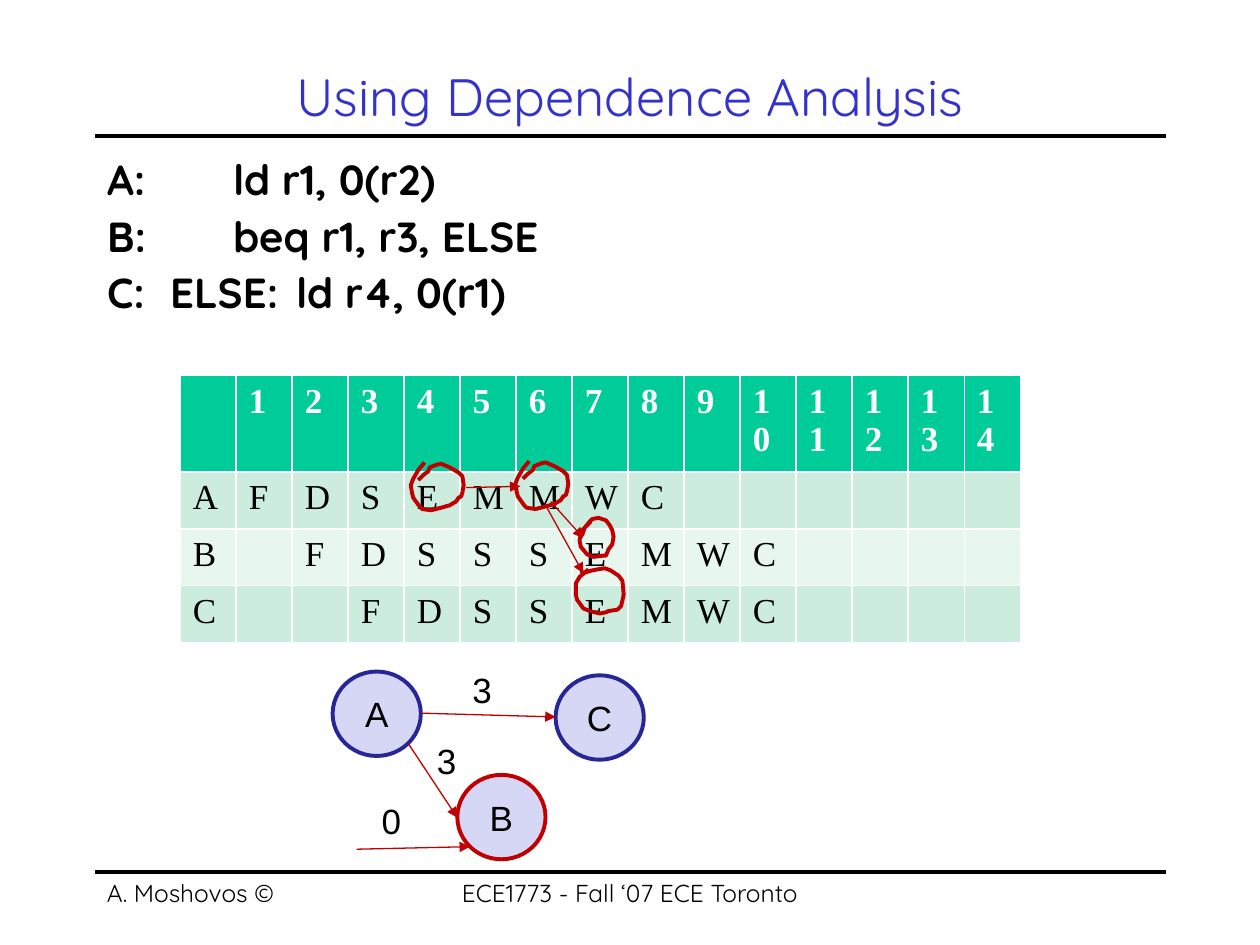
import pptx
import pptx.dml.color
import pptx.enum.shapes
import pptx.enum.text
import pptx.oxml
import pptx.oxml.ns
import pptx.util
from pptx.util import Inches

ALIGN = pptx.enum.text.PP_ALIGN
ANCHOR = pptx.enum.text.MSO_ANCHOR
RED = "C00000"


def rgb(value):
    return pptx.dml.color.RGBColor.from_string(value)


def style(tf, size, font, color="000000", bold=False, align=ALIGN.LEFT):
    for p in tf.paragraphs:
        p.alignment = align
        for r in p.runs:
            r.font.size = pptx.util.Pt(size)
            r.font.name = font
            r.font.bold = bold
            r.font.color.rgb = rgb(color)


prs = pptx.Presentation()
prs.slide_width, prs.slide_height = Inches(10), Inches(7.5)
s = prs.slides.add_slide(prs.slide_layouts[1])

title, body = s.shapes.title, s.placeholders[1]
title.left, title.top, title.width, title.height = map(Inches, (0.75, 0.42, 8.5, 0.67))
title.text_frame.text = "Using Dependence Analysis"
title.text_frame.auto_size = pptx.enum.text.MSO_AUTO_SIZE.NONE
title.text_frame.vertical_anchor = ANCHOR.MIDDLE
style(title.text_frame, 30, "Quicksand", "3333CC", align=ALIGN.CENTER)

body.left, body.top, body.width, body.height = map(Inches, (0.75, 1.17, 8.5, 3.84))
tf = body.text_frame
tf.text = "A:\t\tld r1, 0(r2)\nB:\t\tbeq r1, r3, ELSE\nC:\tELSE:\tld r4, 0(r1)"
tf.auto_size = pptx.enum.text.MSO_AUTO_SIZE.NONE
style(tf, 24, "Quicksand", bold=True)
for p in tf.paragraphs:
    p.space_before = pptx.util.Pt(3.5)
    pPr = p._p.get_or_add_pPr()
    pPr.set("marL", "0")
    pPr.set("indent", "0")
    pPr.append(pptx.oxml.parse_xml("<a:buNone %s/>" % pptx.oxml.ns.nsdecls("a")))

for text, x, w, align in [("A. Moshovos ©", 0.75, 2.08, ALIGN.LEFT),
                          ("ECE1773 - Fall ‘07 ECE Toronto", 3.25, 3.5, ALIGN.CENTER)]:
    sp = s.shapes.add_textbox(Inches(x), Inches(6.92), Inches(w), Inches(0.42))
    sp.text_frame.word_wrap = True
    sp.text_frame.text = text
    style(sp.text_frame, 14, "Quicksand", align=align)

rows = [[""] + [str(n) for n in range(1, 15)],
        ["A"] + list("FDSEMMWC"),
        ["B", ""] + list("FDSSSEMWC"),
        ["C", "", ""] + list("FDSSEMWC")]
fills = ["00CC99", "CCECDE", "E7F6EF", "CCECDE"]
table = s.shapes.add_table(4, 15, Inches(1.43), Inches(2.98),
                           Inches(6.67), Inches(2.06)).table
for i, row in enumerate(rows):
    table.rows[i].height = Inches(0.45 if i else 0.71)
    for j in range(15):
        cell = table.cell(i, j)
        cell.fill.solid()
        cell.fill.fore_color.rgb = rgb(fills[i])
        if j < len(row) and row[j]:
            cell.text_frame.text = row[j]
            style(cell.text_frame, 20, "Times New Roman",
                  "000000" if i else "FFFFFF", bold=i == 0)

stage_loop = [(3.37, 3.67), (3.32, 3.73), (3.28, 3.8), (3.26, 3.85), (3.27, 3.91),
              (3.28, 3.95), (3.33, 4.02), (3.35, 4.04), (3.42, 4.05), (3.5, 4.03),
              (3.57, 4.01), (3.62, 3.98), (3.64, 3.95), (3.66, 3.94), (3.67, 3.91),
              (3.68, 3.85), (3.67, 3.78), (3.64, 3.75), (3.57, 3.71), (3.5, 3.68),
              (3.46, 3.69), (3.41, 3.71), (3.4, 3.74), (3.36, 3.77), (3.32, 3.81)]
loops = [
    stage_loop,
    [(x + 0.83, y - 0.01) for x, y in stage_loop],
    [(4.69, 4.14), (4.62, 4.21), (4.61, 4.24), (4.6, 4.29), (4.61, 4.34), (4.66, 4.4),
     (4.71, 4.42), (4.79, 4.41), (4.81, 4.41), (4.83, 4.36), (4.86, 4.32), (4.87, 4.26),
     (4.86, 4.21), (4.84, 4.17), (4.81, 4.13), (4.75, 4.11), (4.7, 4.12), (4.68, 4.14),
     (4.64, 4.19), (4.62, 4.25)],
    [(4.67, 4.52), (4.6, 4.58), (4.57, 4.63), (4.57, 4.72), (4.58, 4.76), (4.63, 4.83),
     (4.68, 4.85), (4.76, 4.87), (4.81, 4.86), (4.83, 4.85), (4.9, 4.84), (4.93, 4.81),
     (4.95, 4.72), (4.94, 4.61), (4.91, 4.57), (4.85, 4.53), (4.8, 4.51), (4.74, 4.52),
     (4.69, 4.53), (4.63, 4.55), (4.61, 4.53)],
]
for points in loops:
    points = [(Inches(x), Inches(y)) for x, y in points]
    fb = s.shapes.build_freeform(*points[0])
    fb.add_line_segments(points[1:], close=False)
    sp = fb.convert_to_shape()
    sp.shadow.inherit = False
    sp.fill.background()
    sp.line.color.rgb = rgb(RED)
    sp.line.width = pptx.util.Pt(2.25)

for text, x, y, color in [("A", 2.64, 5.33, "262699"), ("C", 4.41, 5.36, "262699"),
                          ("B", 3.63, 6.15, RED)]:
    sp = s.shapes.add_shape(pptx.enum.shapes.MSO_SHAPE.OVAL, Inches(x), Inches(y),
                            Inches(0.7), Inches(0.67))
    sp.shadow.inherit = False
    sp.fill.solid()
    sp.fill.fore_color.rgb = rgb("D6D6F5")
    sp.line.color.rgb = rgb(color)
    sp.line.width = pptx.util.Pt(2.25)
    sp.text_frame.text = text
    sp.text_frame.vertical_anchor = ANCHOR.MIDDLE
    style(sp.text_frame, 20, "Arial", align=ALIGN.CENTER)

for text, x, y in [("3", 3.65, 5.26), ("3", 3.37, 5.82), ("0", 2.93, 6.3)]:
    sp = s.shapes.add_textbox(Inches(x), Inches(y), Inches(0.36), Inches(0.44))
    sp.text_frame.word_wrap = False
    sp.text_frame.auto_size = pptx.enum.text.MSO_AUTO_SIZE.SHAPE_TO_FIT_TEXT
    sp.text_frame.text = text
    style(sp.text_frame, 20, "Arial")

rules = [(0.75, 1.08, 9.25, 1.08), (0.75, 6.92, 9.25, 6.92)]
arrows = [(4.37, 3.98, 4.63, 4.27), (4.33, 4.01, 4.63, 4.55), (3.7, 3.87, 4.13, 3.86),
          (3.24, 5.9, 3.63, 6.49), (3.34, 5.66, 4.41, 5.69), (2.83, 6.74, 3.73, 6.72)]
for ends in rules + arrows:
    is_arrow = ends in arrows
    cx = s.shapes.add_connector(pptx.enum.shapes.MSO_CONNECTOR.STRAIGHT, *map(Inches, ends))
    cx.line.color.rgb = rgb(RED if is_arrow else "000000")
    cx.line.width = pptx.util.Pt(0.75 if is_arrow else 2.25)
    if is_arrow:
        cx.line._get_or_add_ln().append(pptx.oxml.parse_xml(
            '<a:tailEnd type="triangle" %s/>' % pptx.oxml.ns.nsdecls("a")))
    cx._element.spPr.append(pptx.oxml.parse_xml(
        "<a:effectLst %s/>" % pptx.oxml.ns.nsdecls("a")))

prs.save("out.pptx")
